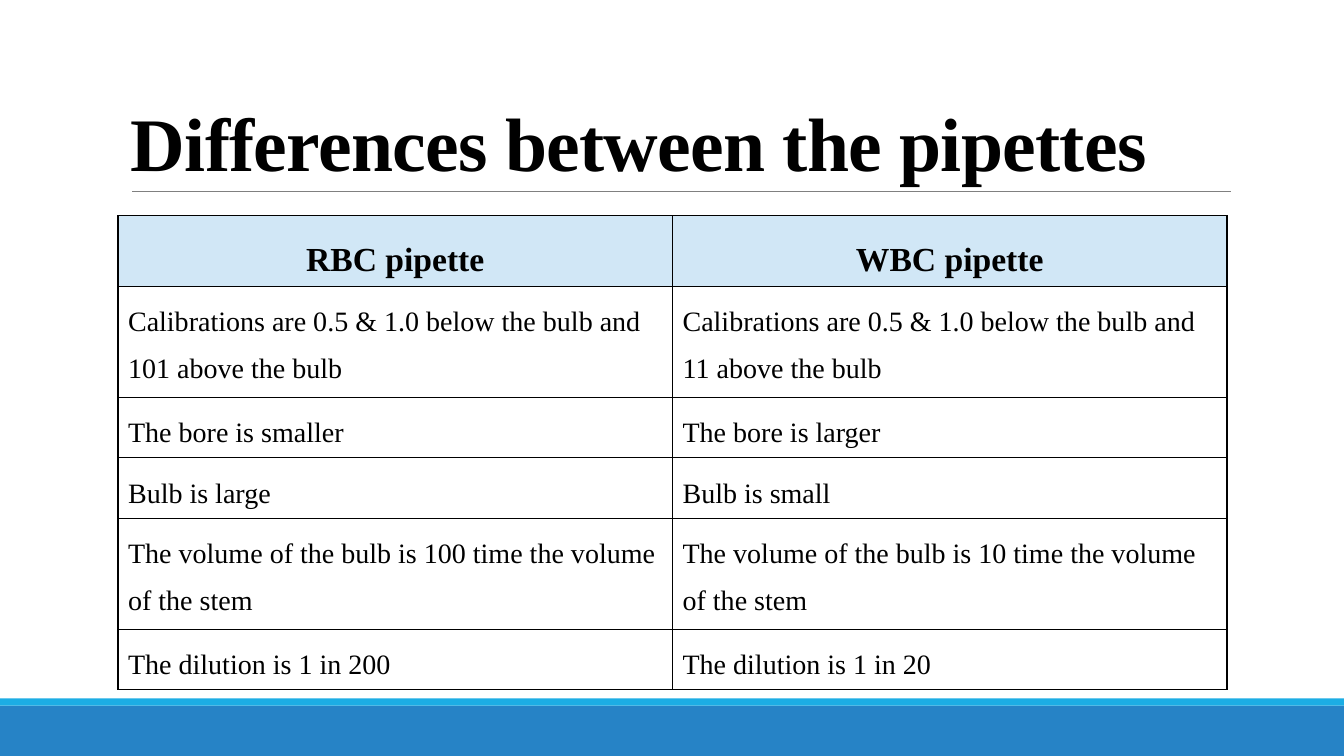
from lxml import etree
from pptx import Presentation
from pptx.dml.color import RGBColor
from pptx.enum.shapes import MSO_CONNECTOR, MSO_SHAPE
from pptx.enum.text import MSO_ANCHOR, PP_ALIGN
from pptx.oxml.ns import qn
from pptx.util import Inches, Pt

RECT, STRAIGHT = MSO_SHAPE.RECTANGLE, MSO_CONNECTOR.STRAIGHT
TOP, MIDDLE, BOTTOM = MSO_ANCHOR.TOP, MSO_ANCHOR.MIDDLE, MSO_ANCHOR.BOTTOM
LEFT, CENTER = PP_ALIGN.LEFT, PP_ALIGN.CENTER

COLORS = {"text": "000000", "rule": "808080", "header": "D1E7F6",
          "band": "2683C6", "stripe": "1CADE4"}
FONT = "Times New Roman"
W, H = 13.33, 7.5


def color(name):
    return RGBColor.from_string(COLORS[name])


def write(p, text, size, bold, spacing, align=LEFT):
    p.alignment, p.line_spacing = align, spacing
    r = p.add_run()
    r.text = text
    for key, value in {"name": FONT, "size": Pt(size), "bold": bold}.items():
        setattr(r.font, key, value)
    r.font.color.rgb = color("text")
    return r


prs = Presentation()
prs.slide_width, prs.slide_height = Inches(W), Inches(H)
s = prs.slides.add_slide(prs.slide_layouts[6])

# Footer bands
for name, top, height in (("band", 7, 0.5), ("stripe", 6.93, 0.07)):
    sp = s.shapes.add_shape(RECT, 0, Inches(top), Inches(W), Inches(height))
    sp.shadow.inherit = False
    sp.fill.solid()
    sp.fill.fore_color.rgb = color(name)
    sp.line.fill.background()

# Rule under the title
rule = s.shapes.add_connector(STRAIGHT, Inches(1.31), Inches(1.9), Inches(12.21), Inches(1.9))
rule.line.color.rgb = color("rule")
rule.line.width = Pt(0.5)
etree.SubElement(rule._element.spPr, qn("a:effectLst"))

# Title
tf = s.shapes.add_textbox(Inches(1.2), Inches(0.31), Inches(11), Inches(1.59)).text_frame
tf.word_wrap = True
tf.vertical_anchor = BOTTOM
r = write(tf.paragraphs[0], "Differences between the pipettes", 54, True, 0.85)
r.font._element.set("spc", "-50")

# Comparison table: row height and the text of both columns
ROWS = [
    (0.65, "RBC pipette", "WBC pipette"),
    (1.02, "Calibrations are 0.5 & 1.0 below the bulb and 101 above the bulb",
     "Calibrations are 0.5 & 1.0 below the bulb and 11 above the bulb"),
    (0.56, "The bore is smaller", "The bore is larger"),
    (0.56, "Bulb is large", "Bulb is small"),
    (1.02, "The volume of the bulb is 100 time the volume of the stem",
     "The volume of the bulb is 10 time the volume of the stem"),
    (0.56, "The dilution is 1 in 200", "The dilution is 1 in 20"),
]
table_height = sum(row[0] for row in ROWS)
table = s.shapes.add_table(len(ROWS), 2, Inches(1.17), Inches(2.14),
                           Inches(11), Inches(table_height)).table
table.first_row = table.horz_banding = False

for i, (height, *texts) in enumerate(ROWS):
    table.rows[i].height = Inches(height)
    header = i == 0
    for j, text in enumerate(texts):
        cell = table.cell(i, j)
        cell.vertical_anchor = MIDDLE if header else TOP
        write(cell.text_frame.paragraphs[0], text, 24 if header else 20,
              header, 1.5, CENTER if header else LEFT)

        # Borders come before the fill in the cell properties
        tcPr = cell._tc.get_or_add_tcPr()
        for side in ("lnL", "lnR", "lnT", "lnB"):
            ln = etree.SubElement(tcPr, qn("a:" + side), w=str(Pt(1)))
            fill = etree.SubElement(ln, qn("a:solidFill"))
            etree.SubElement(fill, qn("a:srgbClr"), val=COLORS["text"])
        if header:
            cell.fill.solid()
            cell.fill.fore_color.rgb = color("header")
        else:
            cell.fill.background()

prs.save("out.pptx")
